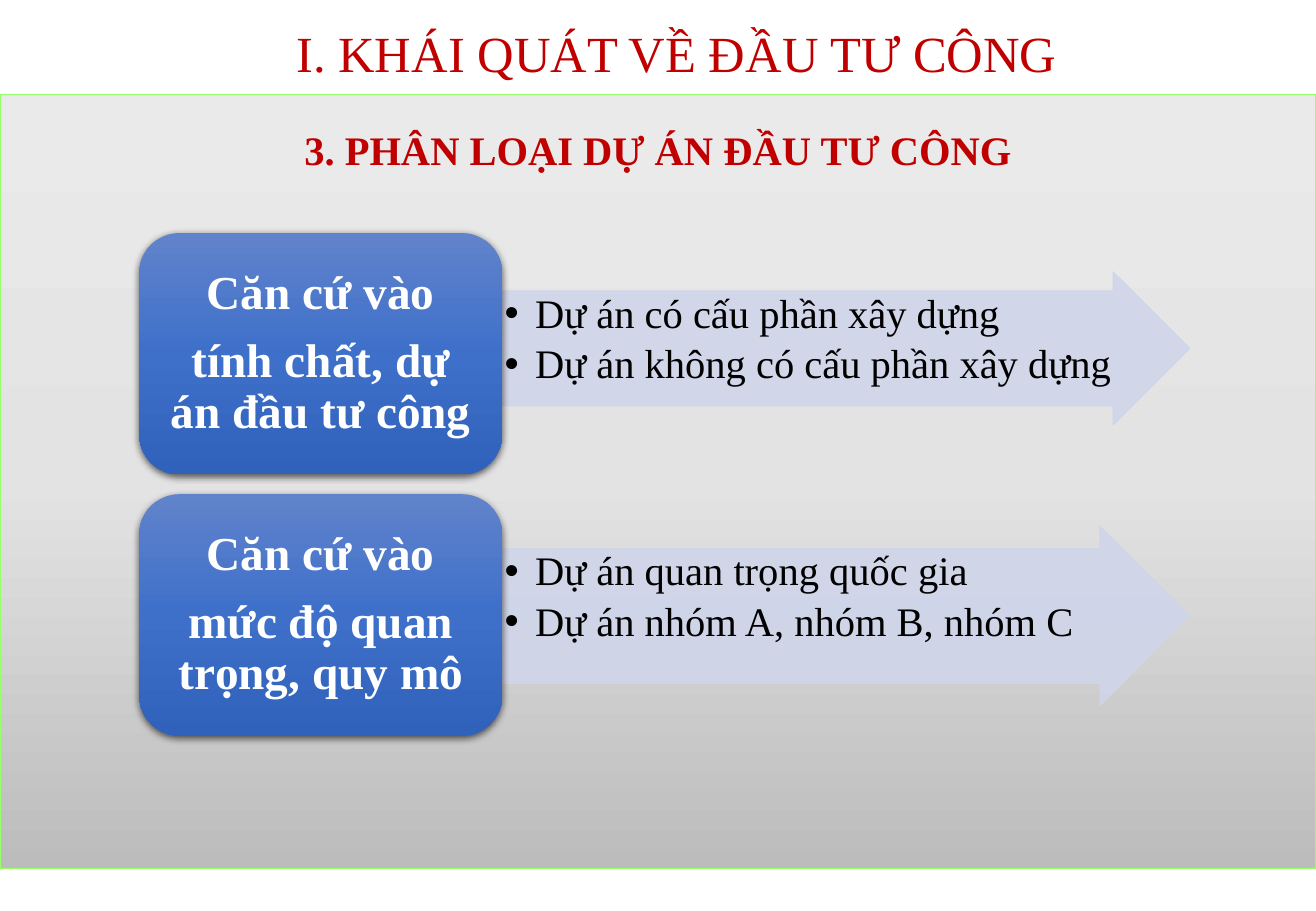
from copy import deepcopy
from dataclasses import dataclass

from lxml import etree
from pptx import Presentation
from pptx.dml.color import RGBColor
from pptx.enum.shapes import MSO_SHAPE
from pptx.enum.text import MSO_ANCHOR, PP_ALIGN
from pptx.oxml.ns import qn
from pptx.util import Inches, Pt

RECT, ROUND, ARROW = MSO_SHAPE.RECTANGLE, MSO_SHAPE.ROUNDED_RECTANGLE, MSO_SHAPE.RIGHT_ARROW
TOP, MIDDLE = MSO_ANCHOR.TOP, MSO_ANCHOR.MIDDLE
LEFT, CENTER = PP_ALIGN.LEFT, PP_ALIGN.CENTER

WIDTH, HEIGHT = Inches(10.83), Inches(7.5)
COL, ROW = WIDTH / 12, HEIGHT / 12


@dataclass(frozen=True)
class Theme:
    face: str = "Times New Roman"
    red: str = "C00000"
    white: str = "FFFFFF"
    black: str = "000000"
    edge: str = "99FF66"
    arrow: str = "CFD5EA"
    gray: tuple = ("EBEAEA", "E4E3E3", "BDBCBC")
    blue: tuple = ("6183CB", "3E70CA", "3062BB")
    title: int = 30
    body: int = 24
    card: int = 28


THEME = Theme()

TITLE = {
    "font": {"size": Pt(THEME.title)}, "color": THEME.red,
    "para": {"alignment": CENTER, "line_spacing": 0.9},
    "frame": {"vertical_anchor": MIDDLE},
}
HEAD = {
    "font": {"size": Pt(THEME.body), "bold": True}, "color": THEME.red,
    "para": {"alignment": CENTER, "line_spacing": 1.5, "space_before": Pt(8.1)},
    "frame": {"vertical_anchor": TOP},
}
CARD = {
    "font": {"size": Pt(THEME.card), "bold": True}, "color": THEME.white,
    "para": {"alignment": CENTER, "line_spacing": 0.9, "space_after": Pt(9.8)},
    "frame": {"vertical_anchor": MIDDLE, "margin_left": Inches(0.12),
              "margin_right": Inches(0.12), "margin_top": Inches(0.06),
              "margin_bottom": Inches(0.06)},
}
LIST = {
    "font": {"size": Pt(THEME.body)}, "color": THEME.black, "bullet": True,
    "para": {"alignment": LEFT, "level": 1, "line_spacing": 0.9, "space_after": Pt(4)},
    "frame": {"vertical_anchor": TOP, "margin_left": Inches(0.02),
              "margin_right": Inches(0.02), "margin_top": Inches(0.02),
              "margin_bottom": Inches(0.02)},
}

CARD_X, CARD_Y, CARD_W, CARD_H, PITCH = 1.27, 3.07, 3.31, 3.18, 3.44
ARROW_W = 6.27

# card lines, list items, arrow top, arrow height
GROUPS = [
    (["Căn cứ vào", "tính chất, dự án đầu tư công"],
     ["Dự án có cấu phần xây dựng", "Dự án không có cấu phần xây dựng"], 3.58, 2.02),
    (["Căn cứ vào", "mức độ quan trọng, quy mô"],
     ["Dự án quan trọng quốc gia", "Dự án nhóm A, nhóm B, nhóm C"], 6.93, 2.37),
]


def place(x, y, w, h):
    """Turn grid columns and rows into slide lengths."""
    return [round(n) for n in (x * COL, y * ROW, w * COL, h * ROW)]


def assign(item, values):
    for name, value in values.items():
        setattr(item, name, value)


def add_node(parent, tag, **attrs):
    return etree.SubElement(parent, qn(tag), attrs)


def add_bullet(para):
    props = para._p.get_or_add_pPr()
    props.set("marL", str(Inches(0.25)))
    props.set("indent", str(-Inches(0.25)))
    add_node(props, "a:buFont", typeface="Arial")
    add_node(props, "a:buChar", char="•")


def write(shape, lines, style):
    frame = shape.text_frame
    frame.word_wrap = True
    assign(frame, style["frame"])
    for i, line in enumerate(lines):
        para = frame.paragraphs[0] if i == 0 else frame.add_paragraph()
        assign(para, style["para"])
        if style.get("bullet"):
            add_bullet(para)
        run = para.add_run()
        run.text = line
        assign(run.font, {"name": THEME.face, **style["font"]})
        run.font.color.rgb = RGBColor.from_string(style["color"])


def add_block(slide, kind, box):
    shape = slide.shapes.add_shape(kind, *place(*box))
    shape.shadow.inherit = False
    shape.line.fill.background()
    return shape


def shade(shape, colors):
    """Fill from top to bottom with three evenly spaced colours."""
    fill = shape.fill
    fill.gradient()
    fill.gradient_angle = 270
    stops = next(shape._element.spPr.iter(qn("a:gsLst")))
    stops.append(deepcopy(stops[0]))
    for i, (stop, color) in enumerate(zip(fill.gradient_stops, colors)):
        stop.position = i / 2
        stop.color.rgb = RGBColor.from_string(color)


def draw_edge(shape, color, width):
    shape.line.color.rgb = RGBColor.from_string(color)
    shape.line.width = Pt(width)


def add_shadow(shape):
    effects = shape._element.spPr.find(qn("a:effectLst"))
    outer = add_node(effects, "a:outerShdw", blurRad=str(Pt(4.5)), dist=str(Pt(1.5)),
                     dir="5400000", algn="ctr", rotWithShape="0")
    color = add_node(outer, "a:srgbClr", val=THEME.black)
    add_node(color, "a:alpha", val="63000")


def add_title(slide, text, box):
    write(slide.shapes.add_textbox(*place(*box)), [text], TITLE)


def add_panel(slide, text, box):
    panel = add_block(slide, RECT, box)
    shade(panel, THEME.gray)
    draw_edge(panel, THEME.edge, 0.75)
    write(panel, [text], HEAD)


def add_arrow(slide, items, box):
    arrow = add_block(slide, ARROW, box)
    arrow.adjustments[0] = 0.75
    arrow.adjustments[1] = 0.5
    arrow.fill.solid()
    arrow.fill.fore_color.rgb = RGBColor.from_string(THEME.arrow)
    draw_edge(arrow, THEME.arrow, 0.5)
    for color in arrow._element.spPr.iter(qn("a:srgbClr")):
        add_node(color, "a:alpha", val="90000")
    write(arrow, items, LIST)


def add_card(slide, lines, box):
    card = add_block(slide, ROUND, box)
    shade(card, THEME.blue)
    add_shadow(card)
    write(card, lines, CARD)


def main():
    deck = Presentation()
    deck.slide_width, deck.slide_height = WIDTH, HEIGHT
    slide = deck.slides.add_slide(deck.slide_layouts[6])
    add_title(slide, "I. KHÁI QUÁT VỀ ĐẦU TƯ CÔNG", (0.64, 0.06, 11.06, 1.36))
    add_panel(slide, "3. PHÂN LOẠI DỰ ÁN ĐẦU TƯ CÔNG", (0, 1.25, 12, 10.19))
    for i, (lines, items, top, height) in enumerate(GROUPS):
        add_arrow(slide, items, (CARD_X + CARD_W, top, ARROW_W, height))
        add_card(slide, lines, (CARD_X, CARD_Y + i * PITCH, CARD_W, CARD_H))
    deck.save("out.pptx")


if __name__ == "__main__":
    main()
